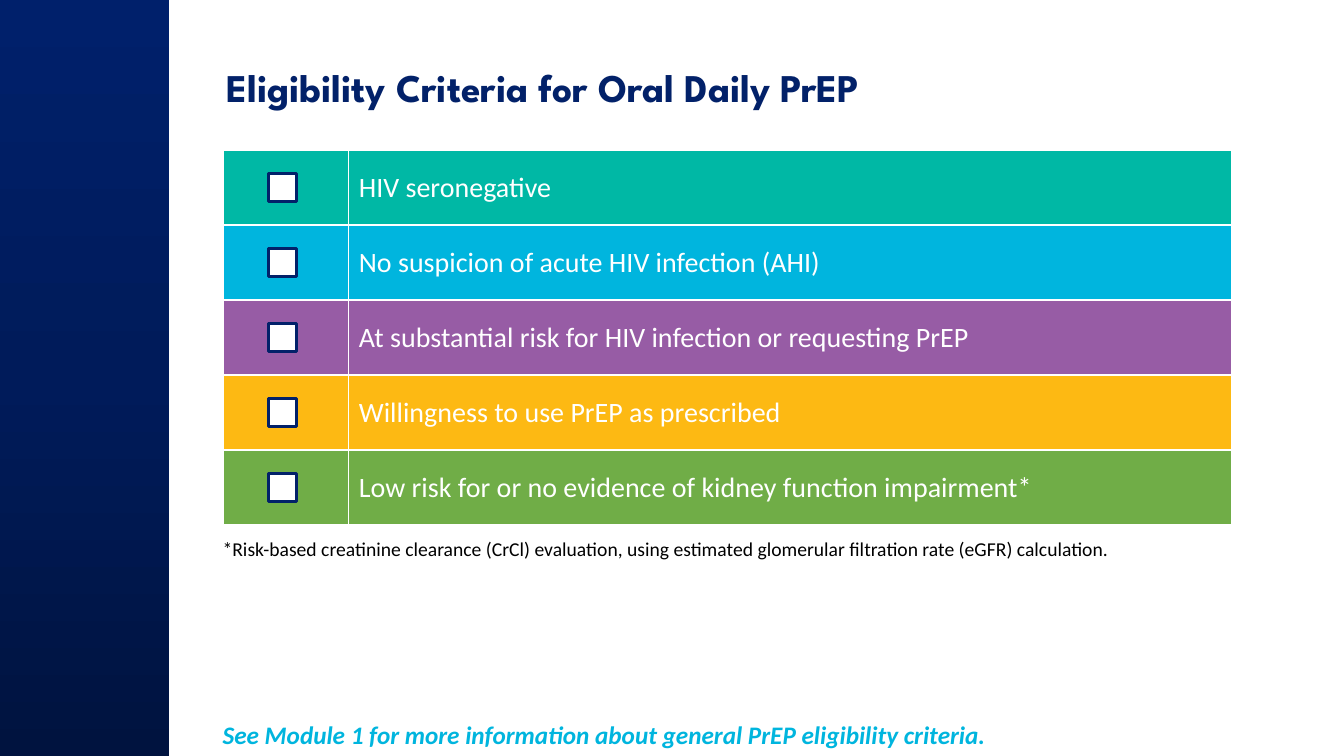
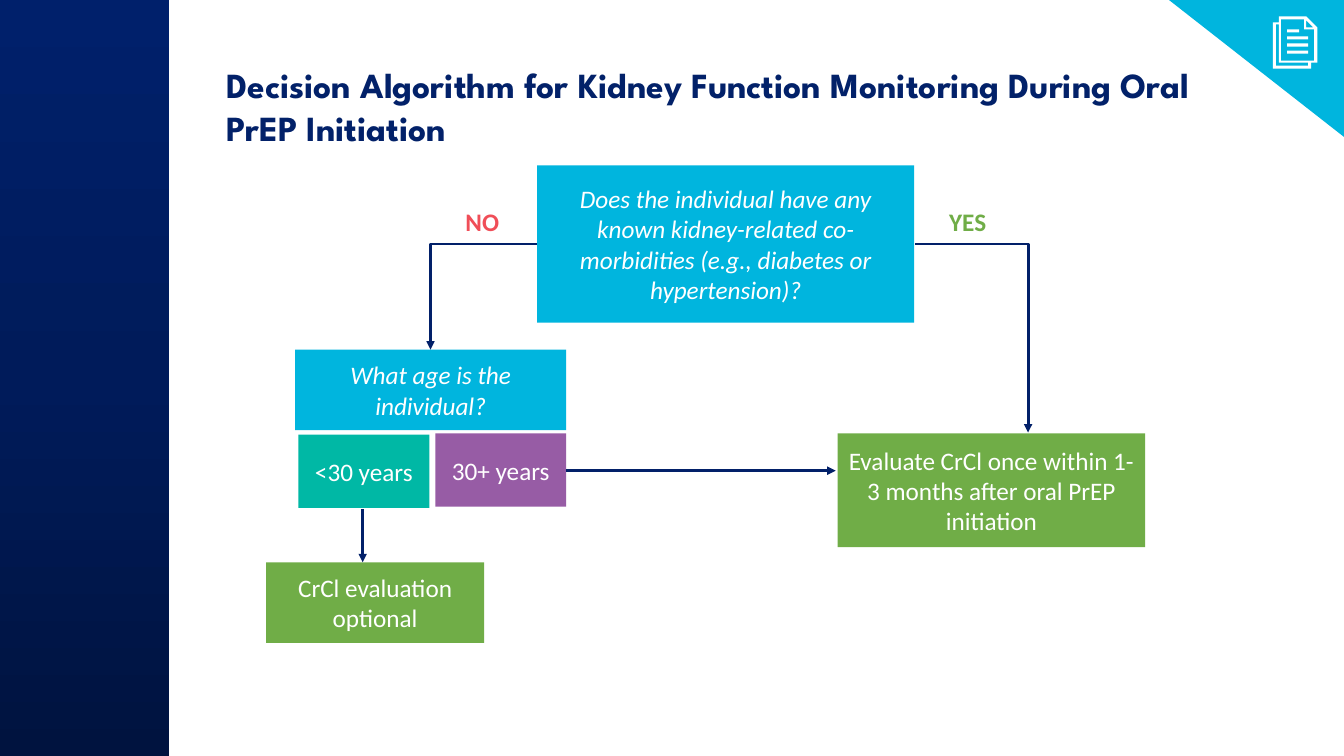
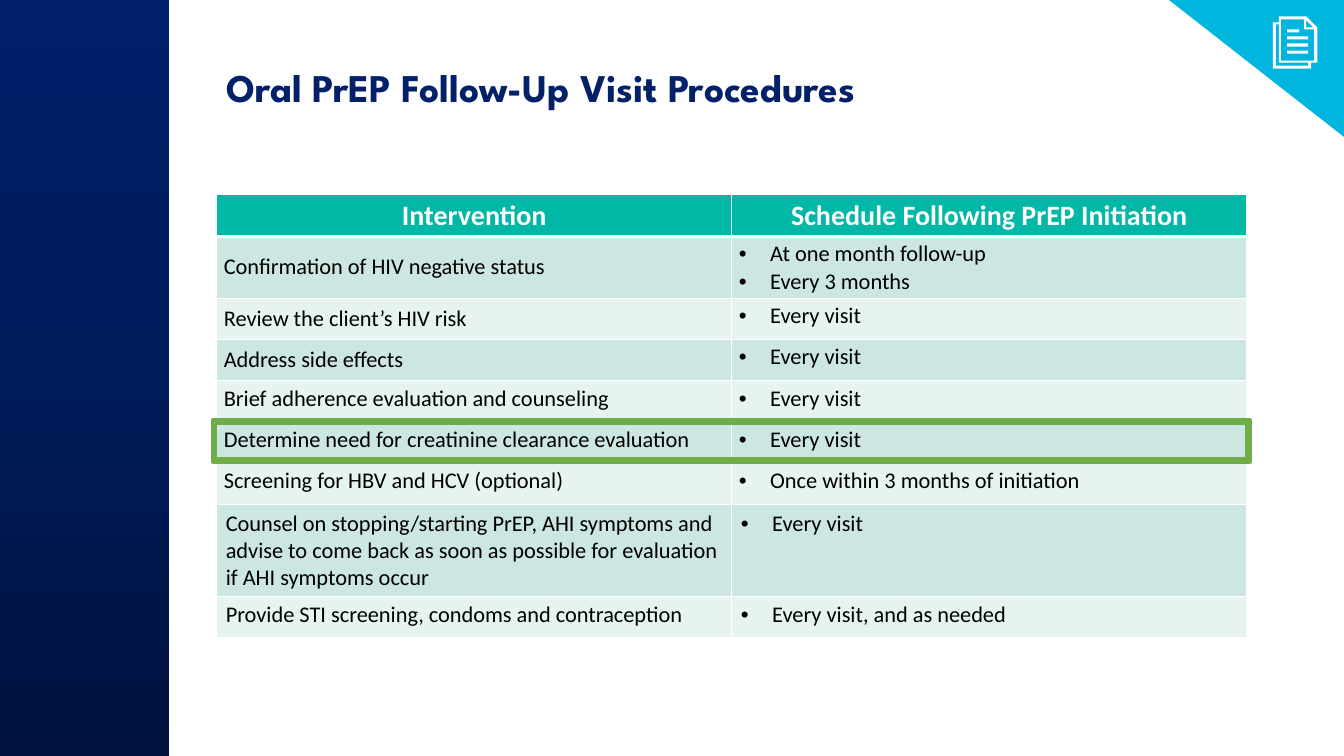
import copy

import pptx
import pptx.dml.color
import pptx.enum.shapes
import pptx.enum.text
import pptx.oxml.ns
import pptx.oxml.xmlchemy
import pptx.util
from lxml import etree
from pptx.dml.color import RGBColor
from pptx.enum.shapes import MSO_CONNECTOR, MSO_SHAPE
from pptx.enum.text import MSO_ANCHOR, PP_ALIGN
from pptx.oxml.ns import qn
from pptx.util import Cm

NAVY = RGBColor(0x02, 0x21, 0x69)
ARROW_NAVY = RGBColor(0x02, 0x20, 0x69)
SIDEBAR_STOPS = (
    RGBColor(0x00, 0x13, 0x3F),
    RGBColor(0x00, 0x1B, 0x5A),
    RGBColor(0x00, 0x20, 0x6B),
)
TEAL = RGBColor(0x00, 0xB8, 0xA5)
BLUE = RGBColor(0x00, 0xB5, 0xDE)
PURPLE = RGBColor(0x97, 0x5C, 0xA5)
YELLOW = RGBColor(0xFD, 0xB9, 0x13)
GREEN = RGBColor(0x70, 0xAD, 0x47)
RED = RGBColor(0xF0, 0x4E, 0x58)
BAND_DARK = RGBColor(0xCC, 0xE6, 0xE1)
BAND_LIGHT = RGBColor(0xE7, 0xF3, 0xF0)
WHITE = RGBColor(0xFF, 0xFF, 0xFF)
BLACK = RGBColor(0x00, 0x00, 0x00)

BODY_FONT = "Calibri"
TITLE_FONT = "League Spartan"

ICON_CONTOURS = [
    [(6, 0), (33, 0), (44, 11), (44, 46), (38, 46), (38, 52), (0, 52), (0, 6), (6, 6)],
    [(8, 3), (31, 3), (31, 13), (41, 13), (41, 44), (8, 44)],
    [(33, 4), (40, 11), (33, 11)],
    [(3, 8), (6, 8), (6, 46), (35, 46), (35, 49), (3, 49)],
] + [
    [(14, top), (right, top), (right, top + 3), (14, top + 3)]
    for top, right in ((13, 26), (20, 35), (27, 35), (34, 35))
]

CRITERIA = [
    ("HIV seronegative", TEAL),
    ("No suspicion of acute HIV infection (AHI)", BLUE),
    ("At substantial risk for HIV infection or requesting PrEP", PURPLE),
    ("Willingness to use PrEP as prescribed", YELLOW),
    ("Low risk for or no evidence of kidney function impairment*", GREEN),
]

PROCEDURES = [
    ("Confirmation of HIV negative status", ["At one month follow-up", "Every 3 months"]),
    ("Review the client’s HIV risk", ["Every visit"]),
    ("Address side effects", ["Every visit"]),
    ("Brief adherence evaluation and counseling", ["Every visit"]),
    ("Determine need for creatinine clearance evaluation", ["Every visit"]),
    ("Screening for HBV and HCV (optional)", ["Once within 3 months of initiation"]),
    (
        "Counsel on stopping/starting PrEP, AHI symptoms and advise to come back "
        "as soon as possible for evaluation if AHI symptoms occur",
        ["Every visit"],
    ),
    ("Provide STI screening, condoms and contraception", ["Every visit, and as needed"]),
]


def style_font(paragraph, size, color, bold=False, italic=False, name=BODY_FONT):
    font = paragraph.font
    font.name = name
    font.size = pptx.util.Pt(size)
    font.bold = bold
    font.italic = italic
    font.color.rgb = color


def add_text(slide, bounds, text, size, color, bold=True, italic=False, name=BODY_FONT):
    box = slide.shapes.add_textbox(*map(Cm, bounds))
    box.text_frame.word_wrap = True
    paragraph = box.text_frame.paragraphs[0]
    paragraph.text = text
    style_font(paragraph, size, color, bold, italic, name)
    return paragraph


def add_block(slide, bounds, fill, kind=MSO_SHAPE.RECTANGLE, line=None, line_width=0):
    shape = slide.shapes.add_shape(kind, *map(Cm, bounds))
    shape.shadow.inherit = False
    shape.fill.solid()
    shape.fill.fore_color.rgb = fill
    if line is None:
        shape.line.fill.background()
    else:
        shape.line.color.rgb = line
        shape.line.width = pptx.util.Pt(line_width)
    return shape


def add_step(slide, bounds, fill, text, italic=False):
    shape = add_block(slide, bounds, fill)
    frame = shape.text_frame
    frame.word_wrap = True
    frame.vertical_anchor = MSO_ANCHOR.MIDDLE
    paragraph = frame.paragraphs[0]
    paragraph.text = text
    paragraph.alignment = PP_ALIGN.CENTER
    style_font(paragraph, 18, WHITE, italic=italic)


def add_arrow(slide, start, end, bent=False):
    kind = MSO_CONNECTOR.ELBOW if bent else MSO_CONNECTOR.STRAIGHT
    arrow = slide.shapes.add_connector(kind, *map(Cm, start + end))
    arrow.line.color.rgb = ARROW_NAVY
    arrow.line.width = pptx.util.Pt(2)
    properties = arrow._element.spPr
    if bent:
        properties.find(qn("a:prstGeom")).set("prst", "bentConnector2")
    etree.SubElement(properties.find(qn("a:ln")), qn("a:tailEnd"), type="triangle")
    etree.SubElement(properties, qn("a:effectLst"))


def add_sidebar(slide):
    sidebar = add_block(slide, (0, 0, 4.27, 19.05), NAVY)
    sidebar.fill.gradient()
    sidebar.fill.gradient_angle = 90
    stop_list = sidebar._element.spPr.find(qn("a:gradFill")).find(qn("a:gsLst"))
    stop_list.insert(1, copy.deepcopy(stop_list[0]))
    for index, color in enumerate(SIDEBAR_STOPS):
        stop = sidebar.fill.gradient_stops[index]
        stop.position = index / 2
        stop.color.rgb = color


def add_corner(slide):
    corner = add_block(slide, (29.46, 0, 4.41, 3.45), BLUE, MSO_SHAPE.RIGHT_TRIANGLE)
    corner.rotation = 180
    first, *others = ICON_CONTOURS
    builder = slide.shapes.build_freeform(*first[0], scale=Cm(0.0254))
    builder.add_line_segments(first[1:])
    for contour in others:
        builder.move_to(*contour[0])
        builder.add_line_segments(contour[1:])
    icon = builder.convert_to_shape(Cm(32.08), Cm(0.41))
    icon.shadow.inherit = False
    icon.fill.solid()
    icon.fill.fore_color.rgb = WHITE
    icon.line.fill.background()


def start_slide(presentation, title, title_size=28, corner=False):
    slide = presentation.slides.add_slide(presentation.slide_layouts[6])
    add_sidebar(slide)
    paragraph = add_text(
        slide, (5.46, 1.45, 25.4, 2.34), title, title_size, NAVY, name=TITLE_FONT
    )
    paragraph.line_spacing = pptx.util.Pt(round(title_size * 1.22, 1))
    if corner:
        add_corner(slide)
    return slide


def add_grid(slide, left, top, widths, heights):
    bounds = (left, top, sum(widths), sum(heights))
    graphic = slide.shapes.add_table(len(heights), len(widths), *map(Cm, bounds))
    table = graphic.table
    table.first_row = False
    table.horz_banding = False
    for column, width in zip(table.columns, widths):
        column.width = Cm(width)
    for row, height in zip(table.rows, heights):
        row.height = Cm(height)
    return table


def style_cell(cell, fill, bottom=1, top=1):
    properties = cell._tc.get_or_add_tcPr()
    for side, width in (("L", 1), ("R", 1), ("T", top), ("B", bottom)):
        border = etree.SubElement(
            properties, qn("a:ln" + side), w=str(pptx.util.Pt(width))
        )
        solid = etree.SubElement(border, qn("a:solidFill"))
        etree.SubElement(solid, qn("a:srgbClr"), val=str(WHITE))
    cell.fill.solid()
    cell.fill.fore_color.rgb = fill


def write_cell(cell, lines, size, color, bold=False, bullet=False, centered=False):
    cell.text = "\n".join(lines)
    for paragraph in cell.text_frame.paragraphs:
        if bullet:
            properties = paragraph._p.get_or_add_pPr()
            properties.set("marL", str(Cm(0.79)))
            properties.set("indent", str(-Cm(0.79)))
            etree.SubElement(properties, qn("a:buFont"), typeface="Arial")
            etree.SubElement(properties, qn("a:buChar"), char="•")
        if centered:
            paragraph.alignment = PP_ALIGN.CENTER
        style_font(paragraph, size, color, bold)


def set_margins(cell, horizontal, vertical):
    cell.margin_left = cell.margin_right = Cm(horizontal)
    cell.margin_top = cell.margin_bottom = Cm(vertical)


def build_eligibility(presentation):
    slide = start_slide(presentation, "Eligibility Criteria for Oral Daily PrEP")
    table_top, row_height, checkbox_size = 3.78, 1.89, 0.71
    table = add_grid(
        slide, 5.64, table_top, [3.15, 22.25], [row_height] * len(CRITERIA)
    )
    for index, (criterion, color) in enumerate(CRITERIA):
        for column in range(2):
            style_cell(table.cell(index, column), color)
        cell = table.cell(index, 1)
        cell.vertical_anchor = MSO_ANCHOR.MIDDLE
        write_cell(cell, [criterion], 20, WHITE)
        checkbox_top = table_top + row_height * (index + 0.5) - checkbox_size / 2
        add_block(
            slide,
            (6.76, checkbox_top, checkbox_size, checkbox_size),
            WHITE,
            line=NAVY,
            line_width=2.25,
        )
    add_text(
        slide,
        (5.36, 13.41, 25.6, 0.86),
        "*Risk-based creatinine clearance (CrCl) evaluation, using estimated "
        "glomerular filtration rate (eGFR) calculation.",
        14,
        BLACK,
        bold=False,
    )
    add_text(
        slide,
        (5.36, 18.01, 24.71, 1.02),
        "See Module 1 for more information about general PrEP eligibility criteria.",
        18,
        BLUE,
        italic=True,
    )


def build_algorithm(presentation):
    slide = start_slide(
        presentation,
        "Decision Algorithm for Kidney Function Monitoring During Oral PrEP Initiation",
        25.2,
        corner=True,
    )
    add_step(
        slide,
        (13.54, 4.17, 9.5, 3.96),
        BLUE,
        "Does the individual have any known kidney-related co-morbidities "
        "(e.g., diabetes or hypertension)?",
        italic=True,
    )
    add_step(slide, (7.44, 8.81, 6.83, 2.03), BLUE, "What age is the individual?", True)
    add_step(slide, (7.52, 10.95, 3.3, 1.85), TEAL, "<30 years")
    add_step(slide, (10.97, 10.92, 3.3, 1.85), PURPLE, "30+ years")
    add_step(slide, (6.71, 14.17, 5.49, 2.03), GREEN, "CrCl evaluation optional")
    add_step(
        slide,
        (21.11, 10.92, 7.75, 2.87),
        GREEN,
        "Evaluate CrCl once within 1-3 months after oral PrEP initiation",
    )
    add_arrow(slide, (13.54, 6.15), (10.85, 8.81), bent=True)
    add_arrow(slide, (23.06, 6.15), (25.91, 10.9), bent=True)
    add_arrow(slide, (9.14, 12.83), (9.14, 14.17))
    add_arrow(slide, (14.27, 11.86), (21.06, 11.86))
    add_text(slide, (11.48, 5.08, 1.8, 1.07), "NO", 18, RED)
    add_text(slide, (23.67, 5.08, 1.8, 1.07), "YES", 18, GREEN)


def build_procedures(presentation):
    slide = start_slide(
        presentation, "Oral PrEP Follow-Up Visit Procedures", corner=True
    )
    heights = [1.04, 1.54] + [1.04] * 5 + [2.31, 1.04]
    table = add_grid(slide, 5.46, 4.91, [12.98, 12.98], heights)
    headings = ("Intervention", "Schedule Following PrEP Initiation")
    for column, heading in enumerate(headings):
        cell = table.cell(0, column)
        style_cell(cell, TEAL, bottom=3)
        set_margins(cell, 0.18, 0.1)
        cell.vertical_anchor = MSO_ANCHOR.MIDDLE
        write_cell(cell, [heading], 20, WHITE, bold=True, centered=True)
    for index, (intervention, schedule) in enumerate(PROCEDURES, 1):
        fill = BAND_DARK if index % 2 else BAND_LIGHT
        for column, lines in enumerate(([intervention], schedule)):
            cell = table.cell(index, column)
            style_cell(cell, fill, top=3 if index == 1 else 1)
            if index < 7:
                set_margins(cell, 0.18, 0.1)
            else:
                set_margins(cell, 0.23, 0.13)
            if column == 0 and index <= 3:
                cell.vertical_anchor = MSO_ANCHOR.MIDDLE
            write_cell(cell, lines, 16, BLACK, bullet=column == 1)
    highlight = add_block(
        slide, (5.36, 10.59, 26.14, 1.04), GREEN, MSO_SHAPE.FRAME, GREEN, 3
    )
    highlight.adjustments[0] = 0.06


def main():
    presentation = pptx.Presentation()
    presentation.slide_width = Cm(33.87)
    presentation.slide_height = Cm(19.05)
    build_eligibility(presentation)
    build_algorithm(presentation)
    build_procedures(presentation)
    presentation.save("out.pptx")


if __name__ == "__main__":
    main()
